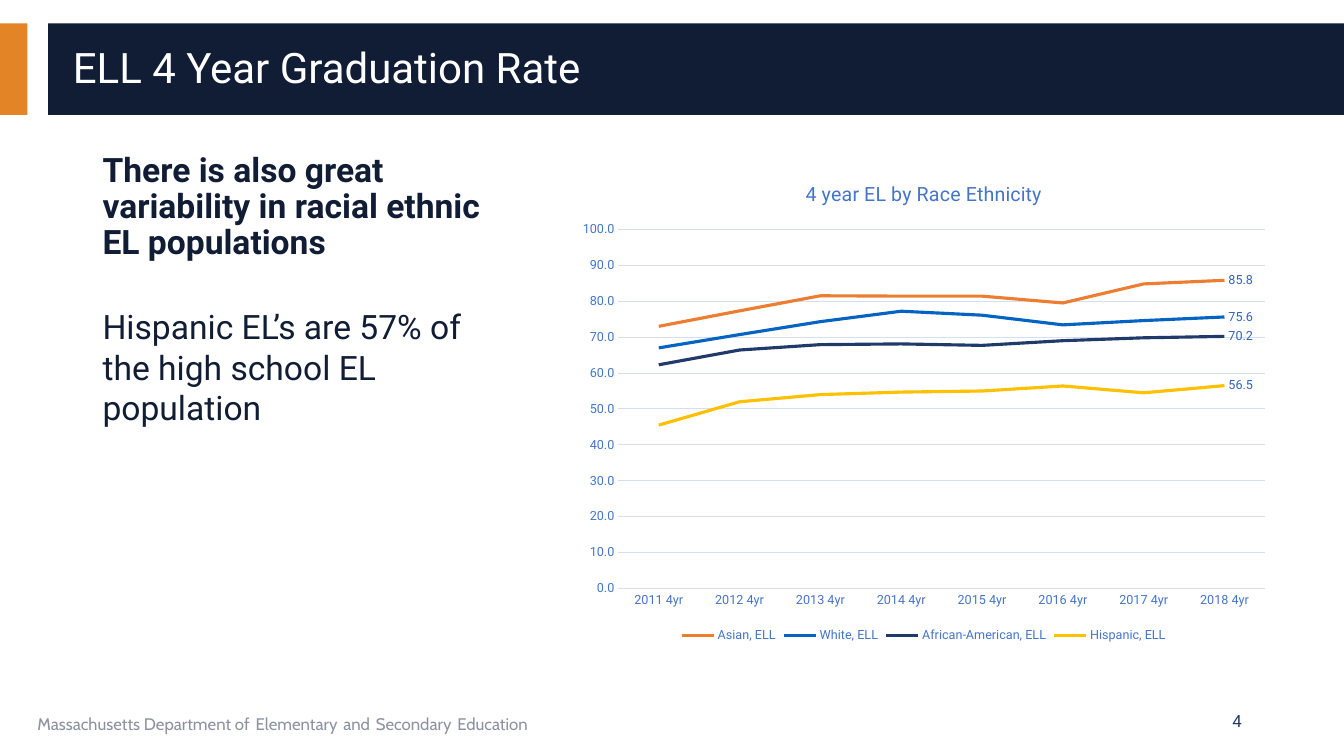
from dataclasses import dataclass

from pptx import Presentation
from pptx.chart.data import CategoryChartData
from pptx.dml.color import RGBColor
from pptx.enum.chart import XL_CHART_TYPE, XL_LABEL_POSITION, XL_LEGEND_POSITION, XL_TICK_MARK
from pptx.enum.shapes import MSO_SHAPE
from pptx.enum.text import MSO_ANCHOR, PP_ALIGN
from pptx.slide import Slide
from pptx.text.text import Font
from pptx.util import Pt

NAVY, WHITE, BLUE = "101D35", "FFFFFF", "203B6A"
GREY, AXIS_BLUE, GRID_BLUE = "8D92A1", "4575C7", "D4DFF2"


@dataclass(frozen=True)
class Box:
    left: float
    top: float
    width: float
    height: float

    def lengths(self) -> tuple[Pt, Pt, Pt, Pt]:
        return Pt(self.left), Pt(self.top), Pt(self.width), Pt(self.height)


@dataclass(frozen=True)
class Band:
    box: Box
    color: str


@dataclass(frozen=True)
class Phrase:
    text: str
    size: float
    color: str
    family: str = "Roboto"
    bold: bool = False


@dataclass(frozen=True)
class TextBlock:
    box: Box
    phrases: list[Phrase]
    anchor: MSO_ANCHOR = MSO_ANCHOR.MIDDLE
    align: PP_ALIGN = PP_ALIGN.LEFT
    line_spacing: float = 1.0


@dataclass(frozen=True)
class GraduationRate:
    group: str
    rates: list[float]
    color: str


def rgb(color: str) -> RGBColor:
    return RGBColor.from_string(color)


def style(font: Font, size: float, color: str, family: str = "Roboto", bold: bool = False) -> None:
    font.name, font.size, font.bold = family, Pt(size), bold
    font.color.rgb = rgb(color)


def draw_band(slide: Slide, band: Band) -> None:
    bar = slide.shapes.add_shape(MSO_SHAPE.RECTANGLE, *band.box.lengths())
    bar.shadow.inherit = False
    bar.fill.solid()
    bar.fill.fore_color.rgb = rgb(band.color)
    bar.line.fill.background()


def draw_text(slide: Slide, block: TextBlock) -> None:
    frame = slide.shapes.add_textbox(*block.box.lengths()).text_frame
    frame.word_wrap = True
    frame.vertical_anchor = block.anchor
    paragraph = frame.paragraphs[0]
    paragraph.alignment = block.align
    paragraph.line_spacing = block.line_spacing
    for phrase in block.phrases:
        run = paragraph.add_run()
        run.text = phrase.text
        style(run.font, phrase.size, phrase.color, phrase.family, phrase.bold)


def footer_phrases(parts: list[str]) -> list[Phrase]:
    phrases: list[Phrase] = []
    for part in parts:
        if phrases:
            phrases.append(Phrase(" ", 18, BLUE, "Cabin"))
        phrases.append(Phrase(part, 12, GREY, "Cabin"))
    return phrases


def draw_rates(slide: Slide, box: Box, title: str, cohorts: list[str],
               groups: list[GraduationRate]) -> None:
    rates_data = CategoryChartData(number_format="0.0")
    rates_data.categories = cohorts
    for group in groups:
        rates_data.add_series(group.group, group.rates)
    chart = slide.shapes.add_chart(XL_CHART_TYPE.LINE, *box.lengths(), rates_data).chart
    style(chart.font, 10, BLUE)

    chart.has_title = True
    heading = chart.chart_title.text_frame.paragraphs[0].add_run()
    heading.text = title
    style(heading.font, 14, AXIS_BLUE)
    chart.chart_title.include_in_layout = False

    chart.has_legend = True
    chart.legend.position = XL_LEGEND_POSITION.BOTTOM
    chart.legend.include_in_layout = False
    style(chart.legend.font, 9, AXIS_BLUE)

    for axis in (chart.category_axis, chart.value_axis):
        axis.major_tick_mark = axis.minor_tick_mark = XL_TICK_MARK.NONE
        style(axis.tick_labels.font, 9, AXIS_BLUE)
    cohort_line = chart.category_axis.format.line
    rate_axis = chart.value_axis
    rate_axis.minimum_scale, rate_axis.maximum_scale, rate_axis.major_unit = 0, 100, 10
    rate_axis.tick_labels.number_format = "#,##0.0"
    rate_axis.tick_labels.number_format_is_linked = False
    rate_axis.format.line.fill.background()
    rate_axis.has_major_gridlines = True
    for line in (cohort_line, rate_axis.major_gridlines.format.line):
        line.color.rgb = rgb(GRID_BLUE)
        line.width = Pt(0.75)

    chart.plots[0].vary_by_categories = False
    for series, group in zip(chart.plots[0].series, groups):
        series.smooth = False
        series.format.line.color.rgb = rgb(group.color)
        series.format.line.width = Pt(2.25)
        latest = series.points[len(cohorts) - 1].data_label
        style(latest.font, 9, "3462B5")
        latest.position = XL_LABEL_POSITION.RIGHT
        series.data_labels.show_value = False


BANDS = [
    Band(Box(0, 16.7, 19.6, 65.4), "E38526"),
    Band(Box(34.3, 16.7, 925.7, 65.4), NAVY),
]
TEXTS = [
    TextBlock(Box(19.6, 500.4, 607.7, 28.8), footer_phrases(
        ["Massachusetts Department of", "Elementary", "and", "Secondary", "Education"])),
    TextBlock(Box(678.2, 500.4, 216, 28.8), [Phrase("4", 12, BLUE)], align=PP_ALIGN.RIGHT),
    TextBlock(Box(45, 28, 895.7, 43.2), [Phrase("ELL 4 Year Graduation Rate", 30, WHITE)],
              line_spacing=0.9),
    TextBlock(Box(66.2, 105.8, 309.6, 98.6),
              [Phrase("There is also great variability in racial ethnic EL populations",
                      24, NAVY, bold=True)],
              anchor=MSO_ANCHOR.TOP, line_spacing=0.9),
    TextBlock(Box(66.2, 215.3, 309.6, 246.2),
              [Phrase("Hispanic EL’s are 57% of the high school EL population", 24, NAVY)],
              anchor=MSO_ANCHOR.TOP),
]
COHORTS = [f"{year} 4yr" for year in range(2011, 2019)]
GROUPS = [
    GraduationRate("Asian, ELL", [73, 77.3, 81.5, 81.4, 81.4, 79.5, 84.8, 85.8], "ED7D31"),
    GraduationRate("White, ELL", [67, 70.7, 74.3, 77.2, 76.1, 73.4, 74.6, 75.6], "0563C1"),
    GraduationRate("African-American, ELL", [62.3, 66.4, 67.9, 68.1, 67.7, 69, 69.8, 70.2], BLUE),
    GraduationRate("Hispanic, ELL", [45.5, 52, 54, 54.7, 55, 56.4, 54.5, 56.5], "FFC000"),
]


def main() -> None:
    deck = Presentation()
    deck.slide_width, deck.slide_height = Pt(960), Pt(540)
    slide = deck.slides.add_slide(deck.slide_layouts[6])
    for band in BANDS:
        draw_band(slide, band)
    for block in TEXTS:
        draw_text(slide, block)
    draw_rates(slide, Box(406.1, 115.2, 507.6, 347), "4 year EL by Race Ethnicity", COHORTS, GROUPS)
    deck.save("out.pptx")


if __name__ == "__main__":
    main()
